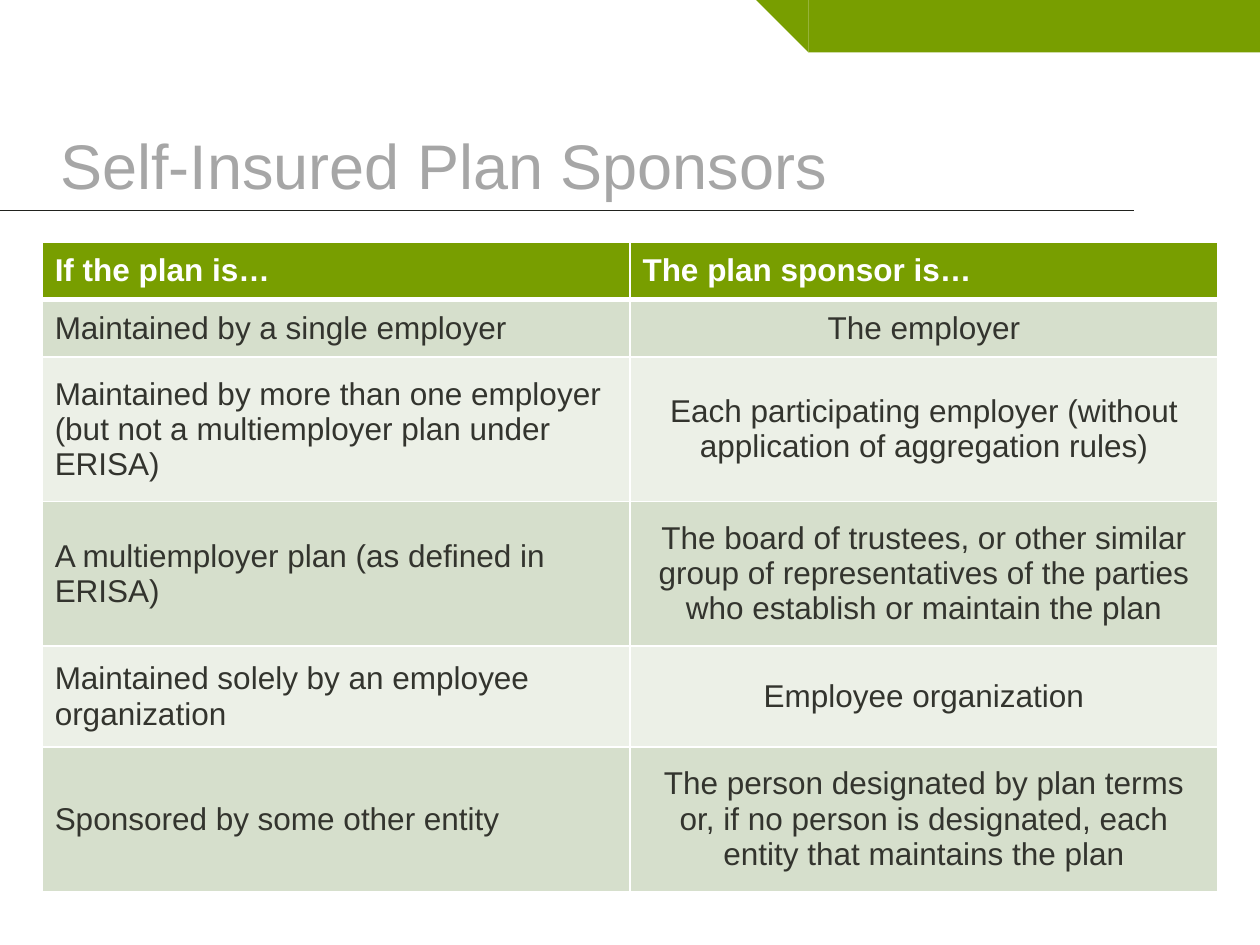
from lxml import etree
from pptx import Presentation
from pptx.dml.color import RGBColor
from pptx.enum import shapes, text
from pptx.oxml import ns
from pptx.util import Cm, Pt

TITLE = "Self-Insured Plan Sponsors"
HEADINGS = ("If the plan is…", "The plan sponsor is…")
SPONSORS = [
    ("Maintained by a single employer", "The employer"),
    ("Maintained by more than one employer (but not a multiemployer plan under ERISA)",
     "Each participating employer (without application of aggregation rules)"),
    ("A multiemployer plan (as defined in ERISA)",
     "The board of trustees, or other similar group of representatives of the parties "
     "who establish or maintain the plan"),
    ("Maintained solely by an employee organization", "Employee organization"),
    ("Sponsored by some other entity",
     "The person designated by plan terms or, if no person is designated, each entity "
     "that maintains the plan"),
]
ROW_HEIGHTS = (1.16, 1.16, 2.91, 2.91, 2.04, 2.91)
COLUMN_WIDTH = 11.85

FONT = "Arial"
GREEN = RGBColor(0x78, 0x9E, 0x00)
BANDS = (RGBColor(0xD6, 0xDF, 0xCC), RGBColor(0xEC, 0xF0, 0xE7))
WHITE = RGBColor(0xFF, 0xFF, 0xFF)
TITLE_GREY = RGBColor(0xA6, 0xA6, 0xA6)
BODY_DARK = RGBColor(0x33, 0x34, 0x2E)
RULE_DARK = RGBColor(0x21, 0x22, 0x1E)


def style(paragraph, size, color, bold=False):
    for run in paragraph.runs:
        run.font.name = FONT
        run.font.size = Pt(size)
        run.font.bold = bold
        run.font.color.rgb = color


def add_green(slide, kind, left, width, height):
    part = slide.shapes.add_shape(kind, Cm(left), 0, Cm(width), Cm(height))
    part.shadow.inherit = False
    part.fill.solid()
    part.fill.fore_color.rgb = GREEN
    part.line.fill.background()
    return part


def add_borders(cell, top, bottom):
    properties = cell._tc.get_or_add_tcPr()
    sides = (("lnL", 1), ("lnR", 1), ("lnT", top), ("lnB", bottom))
    for position, (side, points) in enumerate(sides):
        border = etree.Element(ns.qn(f"a:{side}"), w=str(Pt(points)))
        fill = etree.SubElement(border, ns.qn("a:solidFill"))
        etree.SubElement(fill, ns.qn("a:srgbClr"), val=str(WHITE))
        properties.insert(position, border)


def add_header(slide):
    rule = slide.shapes.add_connector(
        shapes.MSO_CONNECTOR.STRAIGHT, 0, Cm(4.24), Cm(22.86), Cm(4.24))
    rule.line.color.rgb = RULE_DARK
    rule.line.width = Pt(0.25)
    etree.SubElement(rule._element.spPr, ns.qn("a:effectLst"))

    corner = 1.06
    add_green(slide, shapes.MSO_SHAPE.RECTANGLE, 15.24 + corner, 10.16 - corner, corner)
    slant = add_green(slide, shapes.MSO_SHAPE.RIGHT_TRIANGLE, 15.24, corner, corner)
    slant.rotation = 180

    title = slide.shapes.add_textbox(0, Cm(1.14), Cm(24.13), Cm(3.07)).text_frame
    title.word_wrap = True
    title.vertical_anchor = text.MSO_ANCHOR.BOTTOM
    title.margin_left = Cm(1.22)
    title.text = TITLE
    style(title.paragraphs[0], 36, TITLE_GREY)


def add_sponsors(slide):
    rows = [HEADINGS, *SPONSORS]
    columns = len(HEADINGS)
    table = slide.shapes.add_table(
        len(rows), columns, Cm(0.85), Cm(4.88),
        Cm(COLUMN_WIDTH * columns), Cm(sum(ROW_HEIGHTS))).table
    for column in table.columns:
        column.width = Cm(COLUMN_WIDTH)
    for r, (entries, height) in enumerate(zip(rows, ROW_HEIGHTS)):
        table.rows[r].height = Cm(height)
        heading = r == 0
        for c, entry in enumerate(entries):
            cell = table.cell(r, c)
            cell.fill.solid()
            cell.fill.fore_color.rgb = GREEN if heading else BANDS[(r - 1) % 2]
            cell.vertical_anchor = text.MSO_ANCHOR.MIDDLE
            cell.text_frame.text = entry
            paragraph = cell.text_frame.paragraphs[0]
            if c == 1 and not heading:
                paragraph.alignment = text.PP_ALIGN.CENTER
            style(paragraph, 18, WHITE if heading else BODY_DARK, heading)
            add_borders(cell, top=3 if r == 1 else 1, bottom=3 if heading else 1)


def main():
    deck = Presentation()
    deck.slide_width, deck.slide_height = Cm(25.4), Cm(19.05)
    slide = deck.slides.add_slide(deck.slide_layouts[6])
    add_header(slide)
    add_sponsors(slide)
    deck.save("out.pptx")


if __name__ == "__main__":
    main()
